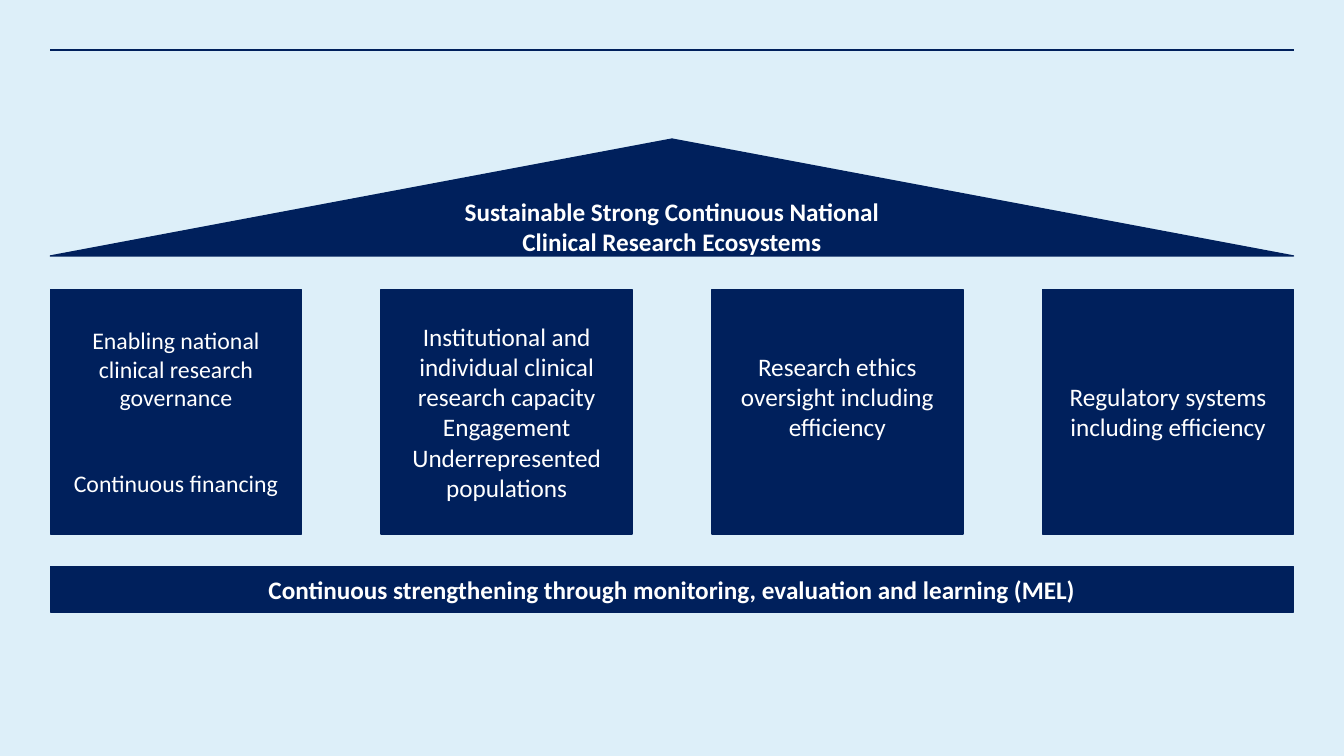
"""Build a slide showing clinical research ecosystems as a roof, pillars and base."""
from lxml import etree
from pptx import Presentation
from pptx import util as u
from pptx.dml.color import RGBColor
from pptx.enum import shapes, text
from pptx.oxml.ns import qn

ROOF = ["Sustainable Strong Continuous National", "Clinical Research Ecosystems"]
PILLARS = [
    {"lines": ["Enabling national clinical research governance", "Continuous financing"],
     "size": 17, "gap": 41},
    {"lines": ["Institutional and individual clinical research capacity", "Engagement",
               "Underrepresented populations"]},
    {"lines": ["Research ethics oversight including efficiency"], "bottom": 0.35},
    {"lines": ["Regulatory systems including efficiency"]},
]
BASE = ["Continuous strengthening through monitoring, evaluation and learning (MEL)"]

NAVY = RGBColor(0x00, 0x20, 0x5C)
WHITE = RGBColor(0xFF, 0xFF, 0xFF)
PALE_BLUE = RGBColor(0xDD, 0xEF, 0xF9)

LEFT, WIDTH = 0.5, 12.33
PILLAR_TOP, PILLAR_WIDTH, PILLAR_HEIGHT = 2.87, 2.49, 2.43
PILLAR_STEP = (WIDTH - PILLAR_WIDTH) / (len(PILLARS) - 1)


def add_block(page, kind, area, lines, size=18, bold=False, gap=0, bottom=0.05):
    block = page.shapes.add_shape(kind, *map(u.Inches, area))
    block.shadow.inherit = False
    block.fill.solid()
    block.fill.fore_color.rgb = NAVY
    block.line.color.rgb = NAVY
    block.line.width = u.Pt(1)
    frame = block.text_frame
    frame.word_wrap = True
    frame.vertical_anchor = text.MSO_ANCHOR.MIDDLE
    frame.margin_bottom = u.Inches(bottom)
    frame.text = "\n".join(lines)
    for index, para in enumerate(frame.paragraphs):
        para.alignment = text.PP_ALIGN.CENTER
        if index and gap:
            para.space_before = u.Pt(gap)
        for span in para.runs:
            span.font.name = "Calibri"
            span.font.size = u.Pt(size)
            span.font.bold = bold
            span.font.color.rgb = WHITE


def add_rule(page):
    rule = page.shapes.add_connector(
        shapes.MSO_CONNECTOR.STRAIGHT,
        *map(u.Inches, (LEFT, 0.5, LEFT + WIDTH, 0.5)))
    rule.line.color.rgb = NAVY
    rule.line.width = u.Pt(1.5)
    etree.SubElement(rule._element.spPr, qn("a:effectLst"))


def main():
    deck = Presentation()
    deck.slide_width, deck.slide_height = u.Inches(13.33), u.Inches(7.5)
    page = deck.slides.add_slide(deck.slide_layouts[6])
    page.background.fill.solid()
    page.background.fill.fore_color.rgb = PALE_BLUE

    add_rule(page)
    add_block(page, shapes.MSO_SHAPE.ISOSCELES_TRIANGLE,
              (LEFT, 1.38, WIDTH, 1.16), ROOF, bold=True)
    for index, pillar in enumerate(PILLARS):
        area = (LEFT + index * PILLAR_STEP, PILLAR_TOP, PILLAR_WIDTH, PILLAR_HEIGHT)
        add_block(page, shapes.MSO_SHAPE.RECTANGLE, area, **pillar)
    add_block(page, shapes.MSO_SHAPE.RECTANGLE,
              (LEFT, 5.62, WIDTH, 0.45), BASE, bold=True)
    deck.save("out.pptx")


if __name__ == "__main__":
    main()
